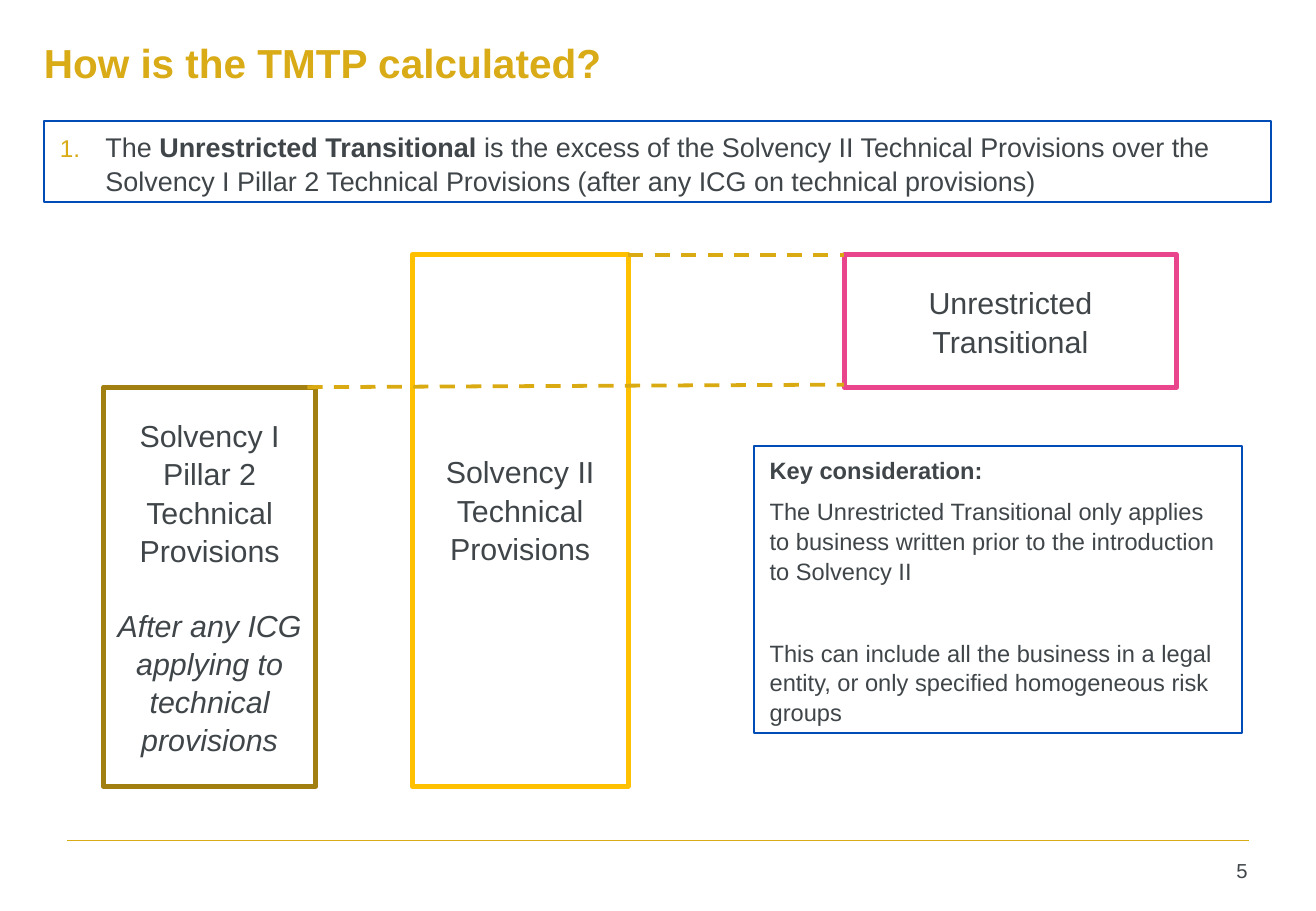
from dataclasses import dataclass
from typing import NamedTuple

from lxml.etree import SubElement
from pptx import Presentation
from pptx.dml.color import RGBColor
from pptx.enum.dml import MSO_LINE
from pptx.enum.shapes import MSO_CONNECTOR, MSO_SHAPE
from pptx.enum.text import MSO_ANCHOR as Anchor, PP_ALIGN as Align
from pptx.oxml.ns import qn
from pptx.util import Pt


@dataclass(frozen=True)
class Theme:
    """Colours, font and type sizes of the slide."""
    font: str = "Arial"
    gold: str = "D9AB16"
    dash: str = "D9AA11"
    ink: str = "3F4548"
    frame: str = "004CB6"
    solvency_one: str = "A17F10"
    solvency_two: str = "FFC000"
    transitional: str = "E9458C"
    title: float = 24
    label: float = 18
    definition: float = 16
    note: float = 14
    number: float = 12
    leading: float = 1.05


class Box(NamedTuple):
    """A rectangle in points."""
    left: float
    top: float
    width: float
    height: float

    def inner(self, left, top, width, height):
        """Return a box placed relative to this one."""
        return Box(self.left + left, self.top + top, width, height)

    def lengths(self):
        """Return the four sides as lengths."""
        return [Pt(side) for side in self]


THEME = Theme()


def set_frame(frame, insets, anchor):
    """Set wrapping, insets (left, top, right, bottom) and anchor."""
    frame.word_wrap = True
    frame.vertical_anchor = anchor
    (frame.margin_left, frame.margin_top,
     frame.margin_right, frame.margin_bottom) = map(Pt, insets)


def style(paragraph, size, color=THEME.ink, bold=None, italic=None,
          align=Align.LEFT, before=0):
    """Style a whole paragraph."""
    paragraph.alignment = align
    paragraph.line_spacing = THEME.leading
    paragraph.space_before = Pt(before)
    font = paragraph.font
    font.name, font.size = THEME.font, Pt(size)
    font.bold, font.italic = bold, italic
    font.color.rgb = RGBColor.from_string(color)


def add_text(slide, box, text, size, color=THEME.ink, insets=(7.2, 3.6, 7.2, 3.6),
             anchor=Anchor.TOP, **options):
    """Add a one-paragraph text box."""
    frame = slide.shapes.add_textbox(*box.lengths()).text_frame
    set_frame(frame, insets, anchor)
    frame.text = text
    style(frame.paragraphs[0], size, color, **options)


def add_panel(slide, box, color, weight, insets, anchor=Anchor.TOP):
    """Add an outlined rectangle and return its text frame."""
    panel = slide.shapes.add_shape(MSO_SHAPE.RECTANGLE, *box.lengths())
    panel.shadow.inherit = False
    panel.fill.background()
    panel.line.color.rgb = RGBColor.from_string(color)
    panel.line.width = Pt(weight)
    set_frame(panel.text_frame, insets, anchor)
    return panel.text_frame


def add_line(slide, start, end, color, weight, dash=None):
    """Add a straight line between two points."""
    line = slide.shapes.add_connector(MSO_CONNECTOR.STRAIGHT, *map(Pt, (*start, *end)))
    line.line.color.rgb = RGBColor.from_string(color)
    line.line.width = Pt(weight)
    if dash:
        line.line.dash_style = dash
    SubElement(line._element.spPr, qn("a:effectLst"))


def add_definition(slide, box):
    """Add the numbered definition panel."""
    frame = add_panel(slide, box, THEME.frame, 1.25, (9.5, 5, 9.5, 5))
    paragraph = frame.paragraphs[0]
    properties = paragraph._p.get_or_add_pPr()
    properties.set("marL", str(Pt(27)))
    properties.set("indent", str(-Pt(27)))
    bullet_color = SubElement(properties, qn("a:buClr"))
    SubElement(bullet_color, qn("a:srgbClr"), val=THEME.gold)
    SubElement(properties, qn("a:buSzPct"), val="90000")
    SubElement(properties, qn("a:buAutoNum"), type="arabicPeriod")
    style(paragraph, THEME.definition)
    for text, bold in (
            ("The ", False),
            ("Unrestricted Transitional ", True),
            ("is the excess of the Solvency II Technical Provisions over the Solvency I "
             "Pillar 2 Technical Provisions (after any ICG on technical provisions)", False)):
        run = paragraph.add_run()
        run.text = text
        run.font.bold = bold


def add_provisions(slide, box):
    """Add the provision bars, their difference and the dashed levels."""
    excess = 78.5
    first = box.inner(0, excess, 126, box.height - excess)
    second = box.inner(183, 0, 128, box.height)
    difference = box.inner(box.width - 197, 0, 197, excess)
    bars = (
        (first, THEME.solvency_one, 3.6,
         ("Solvency I Pillar 2 Technical Provisions",
          "After any ICG applying to technical provisions")),
        (second, THEME.solvency_two, 17, ("Solvency II Technical Provisions",)),
        (difference, THEME.transitional, 3.6, ("Unrestricted Transitional",)),
    )
    for bar, color, bottom, labels in bars:
        frame = add_panel(slide, bar, color, 3, (7.2, 3.6, 7.2, bottom), Anchor.MIDDLE)
        for index, label in enumerate(labels):
            paragraph = frame.paragraphs[0] if index == 0 else frame.add_paragraph()
            paragraph.text = label
            style(paragraph, THEME.label, italic=index > 0, align=Align.CENTER,
                  before=21.7 * index)
    levels = (
        ((second.left + second.width, box.top), (difference.left, box.top)),
        ((first.left + 121, first.top), (difference.left, first.top - 1.5)),
    )
    for start, end in levels:
        add_line(slide, start, end, THEME.dash, 2.25, MSO_LINE.DASH)


def add_consideration(slide, box):
    """Add the key consideration panel."""
    frame = add_panel(slide, box, THEME.frame, 1.25, (9.5, 5, 9.5, 5))
    notes = (
        ("Key consideration:", 0),
        ("The Unrestricted Transitional only applies to business written prior to "
         "the introduction to Solvency II", 7),
        ("This can include all the business in a legal entity, or only specified "
         "homogeneous risk groups", 31),
    )
    for index, (note, before) in enumerate(notes):
        paragraph = frame.paragraphs[0] if index == 0 else frame.add_paragraph()
        paragraph.text = note
        style(paragraph, THEME.note, bold=index == 0, before=before)


def add_footer(slide, box):
    """Add the footer rule and the page number."""
    add_line(slide, (box.left, box.top), (box.left + box.width, box.top), THEME.gold, 1)
    add_text(slide, box.inner(box.width - 49, 6, 55.5, 26.5), "5", THEME.number,
             align=Align.RIGHT)


def main():
    """Build the slide and save it."""
    deck = Presentation()
    deck.slide_width, deck.slide_height = Pt(779.76), Pt(540)
    slide = deck.slides.add_slide(deck.slide_layouts[6])
    add_text(slide, Box(26, 7.5, 621, 57), "How is the TMTP calculated?", THEME.title,
             THEME.gold, (0, 0, 0, 0), Anchor.MIDDLE, bold=True)
    add_definition(slide, Box(26, 71.5, 727, 48.2))
    add_provisions(slide, Box(61.2, 151, 636, 315))
    add_consideration(slide, Box(446.5, 264.2, 289.4, 170.6))
    add_footer(slide, Box(39.8, 498.2, 700, 32))
    deck.save("out.pptx")


if __name__ == "__main__":
    main()
